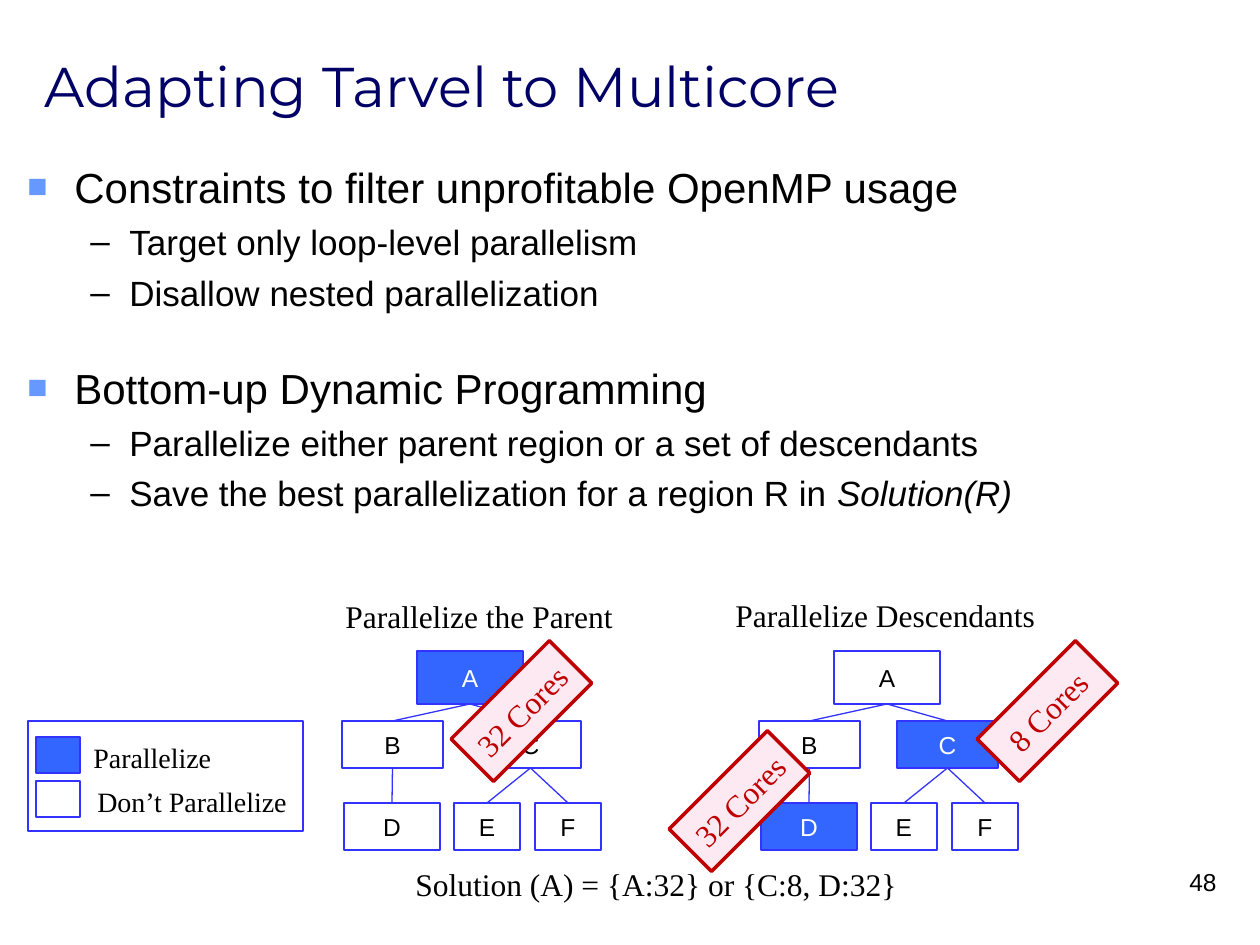
import dataclasses

import pptx
import pptx.dml.color
import pptx.enum.shapes
import pptx.enum.text
import pptx.oxml
import pptx.oxml.ns
import pptx.util

ALIGN = pptx.enum.text.PP_ALIGN
ANCHOR = pptx.enum.text.MSO_ANCHOR
SHAPE = pptx.enum.shapes.MSO_SHAPE


def px(n):
    """Turn slide pixels into EMU."""
    return round(n * 914400 / 126)


@dataclasses.dataclass(frozen=True)
class Theme:
    """Colours, fonts and type sizes of the slide."""
    navy: str = "000066"
    black: str = "000000"
    white: str = "FFFFFF"
    blue: str = "3366FF"
    outline: str = "3333FF"
    bullet: str = "6699FF"
    red: str = "C00000"
    pink: str = "FDE9F2"
    heading: str = "Montserrat"
    sans: str = "Arial"
    serif: str = "Times New Roman"
    title: int = 32
    body: tuple = (24, 20)
    caption: int = 18
    legend: int = 16
    small: int = 14
    thin: float = 0.75
    thick: float = 2


class Builder:
    """Draws styled elements on the current slide."""

    def __init__(self, s, theme):
        """Keep the slide and the theme."""
        self.s, self.t = s, theme

    def rgb(self, color):
        """Return a colour object for a hex string."""
        return pptx.dml.color.RGBColor.from_string(color)

    def font(self, p, size, name, color):
        """Format every run of a paragraph."""
        for r in p.runs:
            r.font.size = pptx.util.Pt(size)
            r.font.name = name
            r.font.color.rgb = self.rgb(color)

    def text(self, box, text, size, name, color=None, align=ALIGN.LEFT,
             anchor=ANCHOR.TOP, wrap=False):
        """Add a one-paragraph text box."""
        tf = self.s.shapes.add_textbox(*map(px, box)).text_frame
        tf.text = text
        tf.word_wrap = wrap
        tf.vertical_anchor = anchor
        tf.paragraphs[0].alignment = align
        self.font(tf.paragraphs[0], size, name, color or self.t.black)

    def bullets(self, box, items):
        """Add a two-level list of (level, space before, text, italic end)."""
        t = self.t
        tf = self.s.shapes.add_textbox(*map(px, box)).text_frame
        tf.word_wrap = True
        for i, (level, before, text, italic) in enumerate(items):
            p = tf.add_paragraph() if i else tf.paragraphs[0]
            p.text = text
            p.level = level
            p.space_before = pptx.util.Pt(before)
            if italic:
                r = p.add_run()
                r.text = italic
                r.font.italic = True
            self.font(p, t.body[level], t.sans, t.black)
            self.bullet(p, level)

    def bullet(self, p, level):
        """Give a paragraph its indent and bullet."""
        left, hang = ((47, 47), (102, 39))[level]
        pPr = p._p.get_or_add_pPr()
        pPr.set("marL", str(px(left)))
        pPr.set("indent", str(-px(hang)))
        ns = pptx.oxml.ns.nsdecls("a")
        parts = [f'<a:buFont {ns} typeface="{self.t.sans}"/>',
                 f'<a:buChar {ns} char="{"■–"[level]}"/>']
        if level == 0:
            parts[:0] = [f'<a:buClr {ns}><a:srgbClr val="{self.t.bullet}"/></a:buClr>',
                         f'<a:buSzPct {ns} val="80000"/>']
        for part in parts:
            pPr.append(pptx.oxml.parse_xml(part))

    def shape(self, box, fill=None, line=None, width=None, kind=SHAPE.RECTANGLE):
        """Add an outlined shape, filled or hollow."""
        sp = self.s.shapes.add_shape(kind, *map(px, box))
        sp.shadow.inherit = False
        if fill:
            sp.fill.solid()
            sp.fill.fore_color.rgb = self.rgb(fill)
        else:
            sp.fill.background()
        sp.line.color.rgb = self.rgb(line or self.t.outline)
        sp.line.width = pptx.util.Pt(width or self.t.thin)
        return sp

    def label(self, sp, text, size, name, color):
        """Centre a label in a shape."""
        tf = sp.text_frame
        tf.text = text
        tf.word_wrap = False
        tf.vertical_anchor = ANCHOR.MIDDLE
        tf.paragraphs[0].alignment = ALIGN.CENTER
        self.font(tf.paragraphs[0], size, name, color)

    def edge(self, parent, child):
        """Join the bottom of a parent box to the top of a child box."""
        (x1, y1, w1, h1), (x2, y2, w2, _) = parent, child
        ends = (x1 + w1 / 2, y1 + h1, x2 + w2 / 2, y2)
        c = self.s.shapes.add_connector(
            pptx.enum.shapes.MSO_CONNECTOR.STRAIGHT, *map(px, ends))
        c.line.color.rgb = self.rgb(self.t.outline)
        c.line.width = pptx.util.Pt(self.t.thin)
        ns = pptx.oxml.ns.nsdecls("a")
        c._element.spPr.append(pptx.oxml.parse_xml(f"<a:effectLst {ns}/>"))

    def tree(self, dx, chosen):
        """Draw the region tree with the chosen regions filled."""
        t = self.t
        nodes = {"A": (417, 651, 106, 53), "B": (342, 721, 101, 47),
                 "C": (480, 721, 101, 47), "D": (344, 803, 96, 47),
                 "E": (454, 803, 66, 47), "F": (535, 803, 66, 47)}
        nodes = {n: (x + dx, y, w, h) for n, (x, y, w, h) in nodes.items()}
        for name, box in nodes.items():
            on = name in chosen
            sp = self.shape(box, t.blue if on else None)
            self.label(sp, name, t.small, t.sans, t.white if on else t.black)
        for parent, child in ("CF", "CE", "BD", "AB", "AC"):
            self.edge(nodes[parent], nodes[child])

    def stamp(self, x, y, text):
        """Add a tilted core-count stamp."""
        t = self.t
        sp = self.shape((x, y, 139, 60), t.pink, t.red, t.thick)
        sp.rotation = 315
        self.label(sp, text, t.caption, t.serif, t.red)


def main():
    """Build and save the slide."""
    prs = pptx.Presentation()
    prs.slide_width, prs.slide_height = px(1260), px(945)
    t = Theme()
    b = Builder(prs.slides.add_slide(prs.slide_layouts[6]), t)

    b.text((32, 6, 1201, 158), "Adapting Tarvel to Multicore", t.title,
           t.heading, t.navy, anchor=ANCHOR.MIDDLE, wrap=True)
    b.text((967, 861, 262, 63), "48", t.small, t.sans, align=ALIGN.RIGHT, wrap=True)
    b.bullets((15, 155, 1201, 630), [
        (0, 2, "Constraints to filter unprofitable OpenMP usage", None),
        (1, 5, "Target only loop-level parallelism", None),
        (1, 5, "Disallow nested parallelization", None),
        (0, 28, "Bottom-up Dynamic Programming", None),
        (1, 5, "Parallelize either parent region or a set of descendants", None),
        (1, 5, "Save the best parallelization for a region R in ", "Solution(R)"),
    ])

    for box, text in (((403, 859, 512, 50), "Solution (A) = {A:32} or {C:8, D:32}"),
                      ((723, 590, 329, 50), "Parallelize Descendants"),
                      ((333, 591, 296, 50), "Parallelize the Parent")):
        b.text(box, text, t.caption, t.serif)
    b.tree(0, "A")
    b.tree(417, "CD")

    b.shape((28, 721, 275, 110), kind=SHAPE.FLOWCHART_PROCESS)
    for y, x, w, text, fill in ((737, 81, 145, "Parallelize", t.blue),
                                (781, 85, 217, "Don’t Parallelize", None)):
        b.shape((36, y, 44, 36), fill)
        b.text((x, y - 3, w, 47), text, t.legend, t.serif)

    for x, y, text in ((452, 681, "32 Cores"), (670, 771, "32 Cores"),
                       (978, 681, "8 Cores")):
        b.stamp(x, y, text)
    prs.save("out.pptx")


if __name__ == "__main__":
    main()
